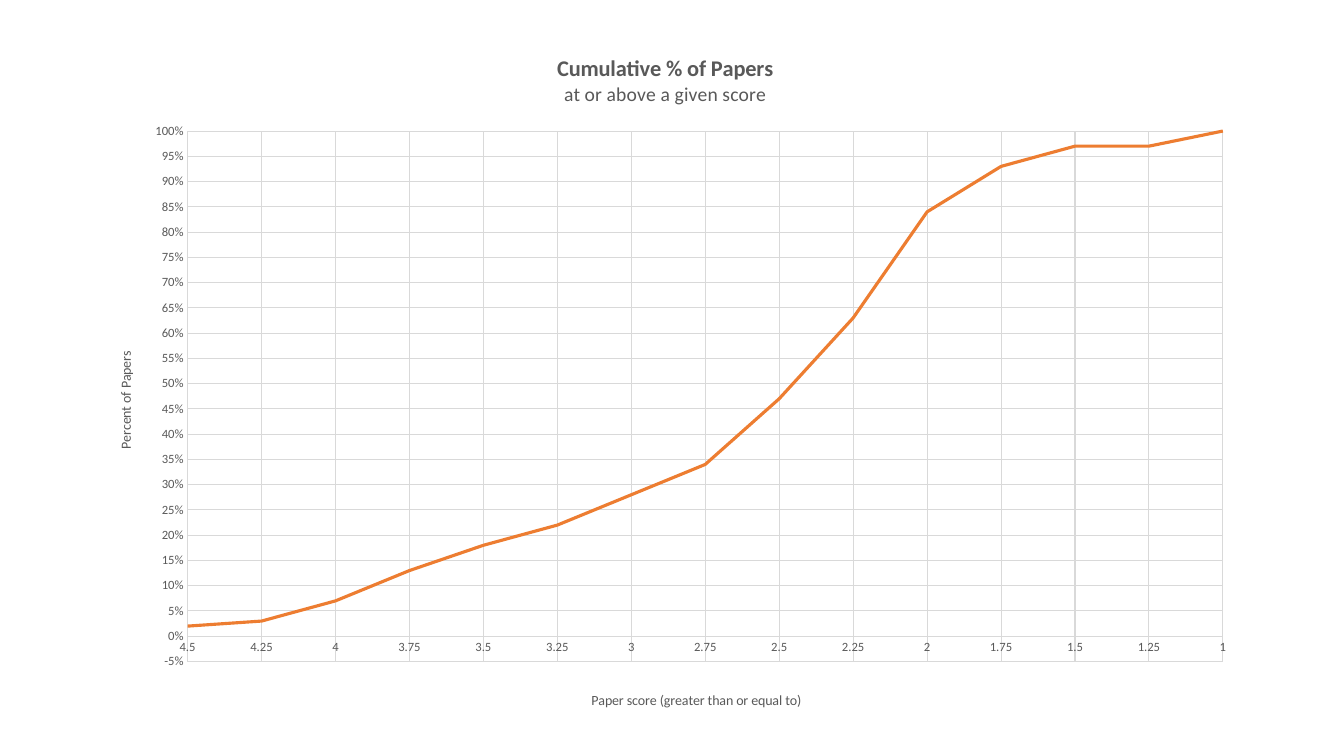
"""Build a slide with a line chart of the cumulative share of papers by score."""
from lxml import etree
from pptx import Presentation
from pptx.chart.data import CategoryChartData
from pptx.dml.color import RGBColor
from pptx.enum.chart import XL_CHART_TYPE, XL_MARKER_STYLE, XL_TICK_LABEL_POSITION, XL_TICK_MARK
from pptx.oxml.ns import qn
from pptx.util import Inches, Pt

LINE = XL_CHART_TYPE.LINE
NO_MARKER = XL_MARKER_STYLE.NONE
NO_TICK = XL_TICK_MARK.NONE
NEXT_TO_AXIS = XL_TICK_LABEL_POSITION.NEXT_TO_AXIS

TITLE = [("Cumulative % of Papers", 16, True), ("at or above a given score", 14, False)]
SCORE_TITLE = [("Paper score (greater than or equal to)", 10, False)]
PERCENT_TITLE = [("Percent of Papers", 10, False)]
TOP_SCORE, SCORE_STEP = 4.5, 0.25
SHARES = (0.02, 0.03, 0.07, 0.13, 0.18, 0.22, 0.28, 0.34,
          0.47, 0.63, 0.84, 0.93, 0.97, 0.97, 1)

FONT = "Calibri"
GREY = RGBColor(0x59, 0x59, 0x59)
GRID = RGBColor(0xD9, 0xD9, 0xD9)
ORANGE = RGBColor(0xED, 0x7D, 0x31)

CHART_BOX = (0.9, 0.29, 11.49, 6.89)
PLOT_SHARE = {"x": 0.0836, "y": 0.1466, "w": 0.8937, "h": 0.7639}
TITLE_SHARES = (
    {"x": 0.4, "y": 0.03},
    {"x": 0.43, "y": 0.95},
    {"x": 0.02, "y": 0.46},
)


def style_font(font, size, bold=False):
    font.name = FONT
    font.size = Pt(size)
    font.bold = bold
    font.color.rgb = GREY


def write_title(frame, lines):
    frame.text = "\n".join(text for text, _, _ in lines)
    for para, (_, size, bold) in zip(frame.paragraphs, lines):
        for span in para.runs:
            style_font(span.font, size, bold)


def style_line(line, color, width):
    line.color.rgb = color
    line.width = Pt(width)


def place(part, shares, position, inner=False):
    for old in part.findall(qn("c:layout")):
        part.remove(old)
    layout = etree.Element(qn("c:layout"))
    manual = etree.SubElement(layout, qn("c:manualLayout"))
    if inner:
        etree.SubElement(manual, qn("c:layoutTarget")).set("val", "inner")
    for side in ("x", "y"):
        etree.SubElement(manual, qn(f"c:{side}Mode")).set("val", "edge")
    for side, share in shares.items():
        etree.SubElement(manual, qn(f"c:{side}")).set("val", str(share))
    part.insert(position, layout)


def style_axis(axis, title):
    axis.has_major_gridlines = True
    style_line(axis.major_gridlines.format.line, GRID, 0.75)
    axis.major_tick_mark = axis.minor_tick_mark = NO_TICK
    axis.tick_label_position = NEXT_TO_AXIS
    style_font(axis.tick_labels.font, 9)
    write_title(axis.axis_title.text_frame, title)


def add_score_chart(page):
    data = CategoryChartData(number_format="0%")
    data.categories = [f"{TOP_SCORE - SCORE_STEP * step:g}" for step in range(len(SHARES))]
    data.add_series("Series 1", SHARES)
    chart = page.shapes.add_chart(LINE, *map(Inches, CHART_BOX), data).chart
    chart.has_legend = False
    style_font(chart.font, 10)
    write_title(chart.chart_title.text_frame, TITLE)

    scores, percents = chart.category_axis, chart.value_axis
    style_axis(scores, SCORE_TITLE)
    style_line(scores.format.line, GRID, 0.75)
    style_axis(percents, PERCENT_TITLE)
    percents.format.line.fill.background()
    percents.minimum_scale, percents.maximum_scale = -0.05, 1
    percents.major_unit = 0.05
    percents.tick_labels.number_format = "0%"
    percents.tick_labels.number_format_is_linked = False

    series = chart.plots[0].series[0]
    series.smooth = False
    series.marker.style = NO_MARKER
    style_line(series.format.line, ORANGE, 2.25)

    value_axis = percents._element
    for old in value_axis.findall(qn("c:crossBetween")):
        value_axis.remove(old)
    between = etree.Element(qn("c:crossBetween"))
    between.set("val", "midCat")
    value_axis.find(qn("c:crosses")).addnext(between)

    place(next(chart.element.iter(qn("c:plotArea"))), PLOT_SHARE, 0, inner=True)
    for title, shares in zip(chart.element.iter(qn("c:title")), TITLE_SHARES):
        place(title, shares, 1)


def main():
    deck = Presentation()
    deck.slide_width, deck.slide_height = Inches(13.33), Inches(7.5)
    page = deck.slides.add_slide(deck.slide_layouts[6])
    add_score_chart(page)
    deck.save("out.pptx")


if __name__ == "__main__":
    main()
